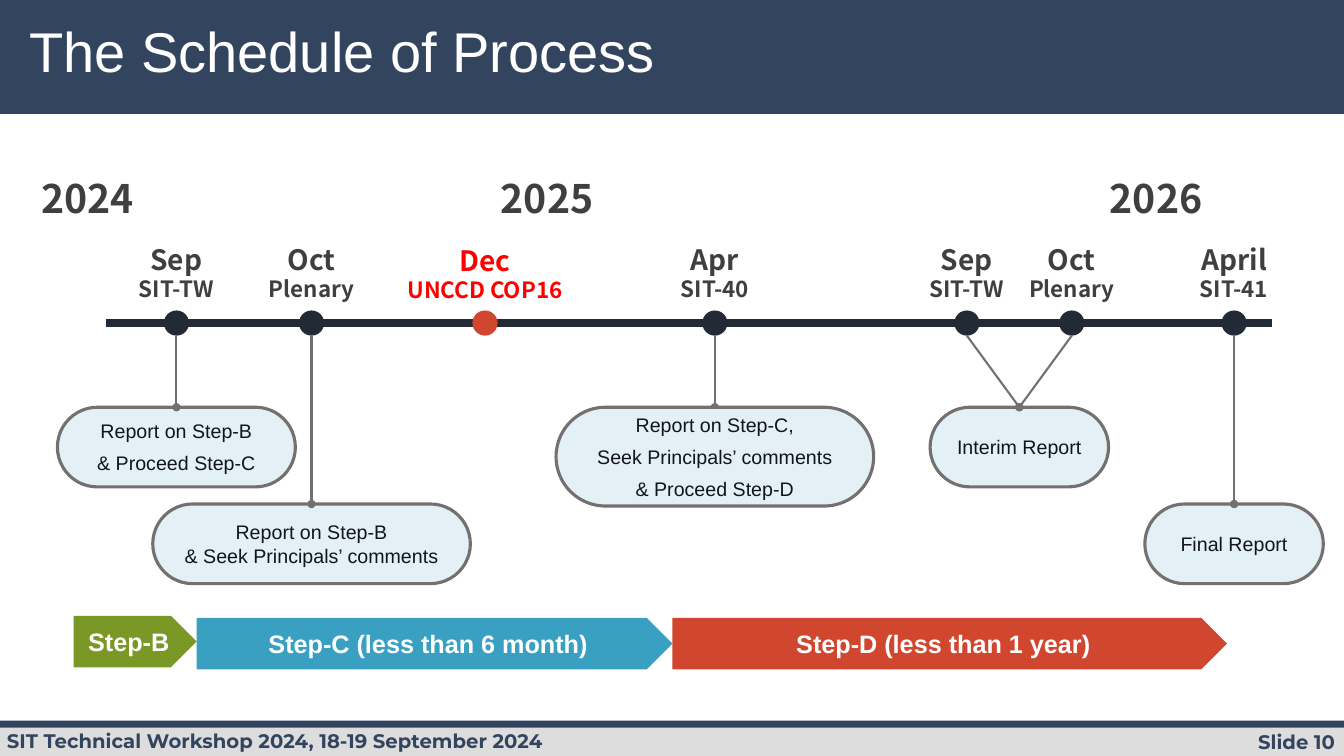
from lxml.etree import SubElement
from pptx import Presentation
from pptx.dml.color import RGBColor
from pptx.enum.shapes import MSO_CONNECTOR, MSO_SHAPE
from pptx.enum.text import MSO_ANCHOR, PP_ALIGN
from pptx.oxml.ns import qn
from pptx.util import Inches, Pt

NAVY = RGBColor(0x33, 0x44, 0x5F)
FOOTER_GREY = RGBColor(0xDD, 0xDD, 0xDD)
WHITE = RGBColor(0xFF, 0xFF, 0xFF)
INK = RGBColor(0x22, 0x2A, 0x35)
LABEL_GREY = RGBColor(0x3F, 0x3F, 0x3F)
ALERT_RED = RGBColor(0xFF, 0x00, 0x00)
CALLOUT_FILL = RGBColor(0xE3, 0xF1, 0xF6)
CALLOUT_LINE = RGBColor(0x75, 0x70, 0x70)
CALLOUT_TEXT = RGBColor(0x11, 0x15, 0x1A)
GREEN = RGBColor(0x7A, 0x98, 0x26)
BLUE = RGBColor(0x3A, 0xA0, 0xC2)
BRICK = RGBColor(0xD1, 0x46, 0x2F)

LABEL_FONT = "Noto Sans CJK JP"
AXIS_Y = 3.205
DOT = 0.25

YEARS = [("2024", 0.31), ("2025", 4.87), ("2026", 10.91)]

# Month, meeting, centre, label colour, dot colour, label drop
EVENTS = [
    ("Sep", "SIT-TW", 1.75, LABEL_GREY, INK, 0),
    ("Oct", "Plenary", 3.09, LABEL_GREY, INK, 0),
    ("Dec", "UNCCD COP16", 4.81, ALERT_RED, BRICK, 0.01),
    ("Apr", "SIT-40", 7.09, LABEL_GREY, INK, 0),
    ("Sep", "SIT-TW", 9.59, LABEL_GREY, INK, 0),
    ("Oct", "Plenary", 10.63, LABEL_GREY, INK, 0),
    ("April", "SIT-41", 12.24, LABEL_GREY, INK, 0),
]

# Lines, centre, top, width, height, line gap, linked event centres, stem behind
CALLOUTS = [
    (["Report on Step-B", "& Proceed Step-C"],
     1.75, 4.04, 2.36, 0.79, 6, [1.75], False),
    (["Report on Step-B", "& Seek Principals’ comments"],
     3.09, 5, 3.15, 0.79, 0, [3.09], False),
    (["Report on Step-C,", "Seek Principals’ comments", "& Proceed Step-D"],
     7.09, 4.04, 3.15, 0.98, 6, [7.09], True),
    (["Interim Report"], 10.11, 4.04, 1.77, 0.79, 0, [9.59, 10.63], False),
    (["Final Report"], 12.24, 5, 1.77, 0.79, 0, [12.24], False),
]

STEPS = [
    ("Step-B", 0.73, 6.11, 1.22, GREEN),
    ("Step-C (less than 6 month)", 1.95, 6.13, 4.72, BLUE),
    ("Step-D (less than 1 year)", 6.67, 6.13, 5.5, BRICK),
]


def write(frame, lines, *, size, color, font="Arial", bold=False,
          align=PP_ALIGN.LEFT, anchor=MSO_ANCHOR.TOP, gap=0, spacing=None):
    frame.word_wrap = True
    frame.vertical_anchor = anchor
    for index, line in enumerate(lines):
        paragraph = frame.paragraphs[0] if index == 0 else frame.add_paragraph()
        paragraph.alignment = align
        if spacing:
            paragraph.line_spacing = spacing
        if index and gap:
            paragraph.space_before = Pt(gap)
        run = paragraph.add_run()
        run.text = line
        run.font.size = Pt(size)
        run.font.name = font
        run.font.bold = bold
        run.font.color.rgb = color


def add_label(slide, text, left, top, width, height, **text_format):
    box = slide.shapes.add_textbox(
        Inches(left), Inches(top), Inches(width), Inches(height))
    write(box.text_frame, [text], **text_format)


def add_block(slide, preset, left, top, width, height, fill, outline=None):
    block = slide.shapes.add_shape(
        preset, Inches(left), Inches(top), Inches(width), Inches(height))
    block.shadow.inherit = False
    block.fill.solid()
    block.fill.fore_color.rgb = fill
    if outline:
        block.line.color.rgb = outline
        block.line.width = Pt(2.25)
    else:
        block.line.fill.background()
    return block


def add_line(slide, start, end, color, width, dotted_start=False):
    line = slide.shapes.add_connector(
        MSO_CONNECTOR.STRAIGHT, *(Inches(value) for value in (*start, *end)))
    line.line.color.rgb = color
    line.line.width = Pt(width)
    if dotted_start:
        SubElement(line.line._get_or_add_ln(), qn("a:headEnd"), type="oval")
    SubElement(line.element.spPr, qn("a:effectLst"))


def add_stems(slide, center, top, event_centers):
    for event_center in event_centers:
        add_line(slide, (center, top), (event_center, AXIS_Y + DOT / 2),
                 CALLOUT_LINE, 1.5, dotted_start=True)


def add_callout(slide, lines, center, top, width, height, gap,
                event_centers, stem_behind):
    if stem_behind:
        add_stems(slide, center, top, event_centers)
    callout = add_block(slide, MSO_SHAPE.ROUNDED_RECTANGLE, center - width / 2,
                        top, width, height, CALLOUT_FILL, CALLOUT_LINE)
    callout.adjustments[0] = 0.5
    write(callout.text_frame, lines, size=14, color=CALLOUT_TEXT, gap=gap,
          align=PP_ALIGN.CENTER, anchor=MSO_ANCHOR.MIDDLE)
    if not stem_behind:
        add_stems(slide, center, top, event_centers)


def add_event(slide, month, meeting, center, label_color, dot_color, drop):
    for text, top, width, height, size in (
            (month, 2.36, 0.94, 0.44, 20), (meeting, 2.68, 1.93, 0.37, 16)):
        add_label(slide, text, center - width / 2, top + drop, width, height,
                  size=size, color=label_color, font=LABEL_FONT, bold=True,
                  align=PP_ALIGN.CENTER)
    add_block(slide, MSO_SHAPE.FLOWCHART_CONNECTOR, center - DOT / 2,
              AXIS_Y - DOT / 2, DOT, DOT, dot_color)


def add_step(slide, text, left, top, width, fill):
    step = add_block(slide, MSO_SHAPE.PENTAGON, left, top, width, 0.51, fill)
    write(step.text_frame, [text], size=18, color=WHITE, bold=True,
          align=PP_ALIGN.CENTER, anchor=MSO_ANCHOR.MIDDLE)


def add_frame(slide):
    # Header and footer bands
    add_block(slide, MSO_SHAPE.RECTANGLE, 0, 0, 13.33, 1.13, NAVY)
    add_block(slide, MSO_SHAPE.RECTANGLE, 0, 7.19, 13.33, 0.31, FOOTER_GREY)
    add_block(slide, MSO_SHAPE.RECTANGLE, 0, 7.15, 13.33, 0.07, NAVY)
    footer_format = {"size": 14, "color": NAVY, "font": "Montserrat", "bold": True}
    add_label(slide, "SIT Technical Workshop 2024, 18-19 September 2024",
              -0.03, 7.18, 6.43, 0.34, **footer_format)
    add_label(slide, "Slide 10", 11.23, 7.19, 2.11, 0.34,
              align=PP_ALIGN.RIGHT, **footer_format)

    # Title, raised above the header band
    title = slide.shapes.title
    title.left, title.top = Inches(0.19), Inches(0.19)
    title.width, title.height = Inches(10.27), Inches(0.85)
    write(title.text_frame, ["The Schedule of Process"], size=40, color=WHITE,
          spacing=0.9)
    title.element.getparent().append(title.element)


def main():
    deck = Presentation()
    deck.slide_width, deck.slide_height = Inches(13.33), Inches(7.5)
    slide = deck.slides.add_slide(deck.slide_layouts[5])
    add_frame(slide)

    # Timeline
    add_line(slide, (1.05, AXIS_Y), (12.62, AXIS_Y), INK, 6)
    for year, left in YEARS:
        add_label(slide, year, left, 1.68, 1.8, 0.57, size=28,
                  color=LABEL_GREY, font=LABEL_FONT, bold=True)
    for event in EVENTS:
        add_event(slide, *event)

    # Reports and steps
    for callout in CALLOUTS:
        add_callout(slide, *callout)
    for step in STEPS:
        add_step(slide, *step)

    deck.save("out.pptx")


if __name__ == "__main__":
    main()
